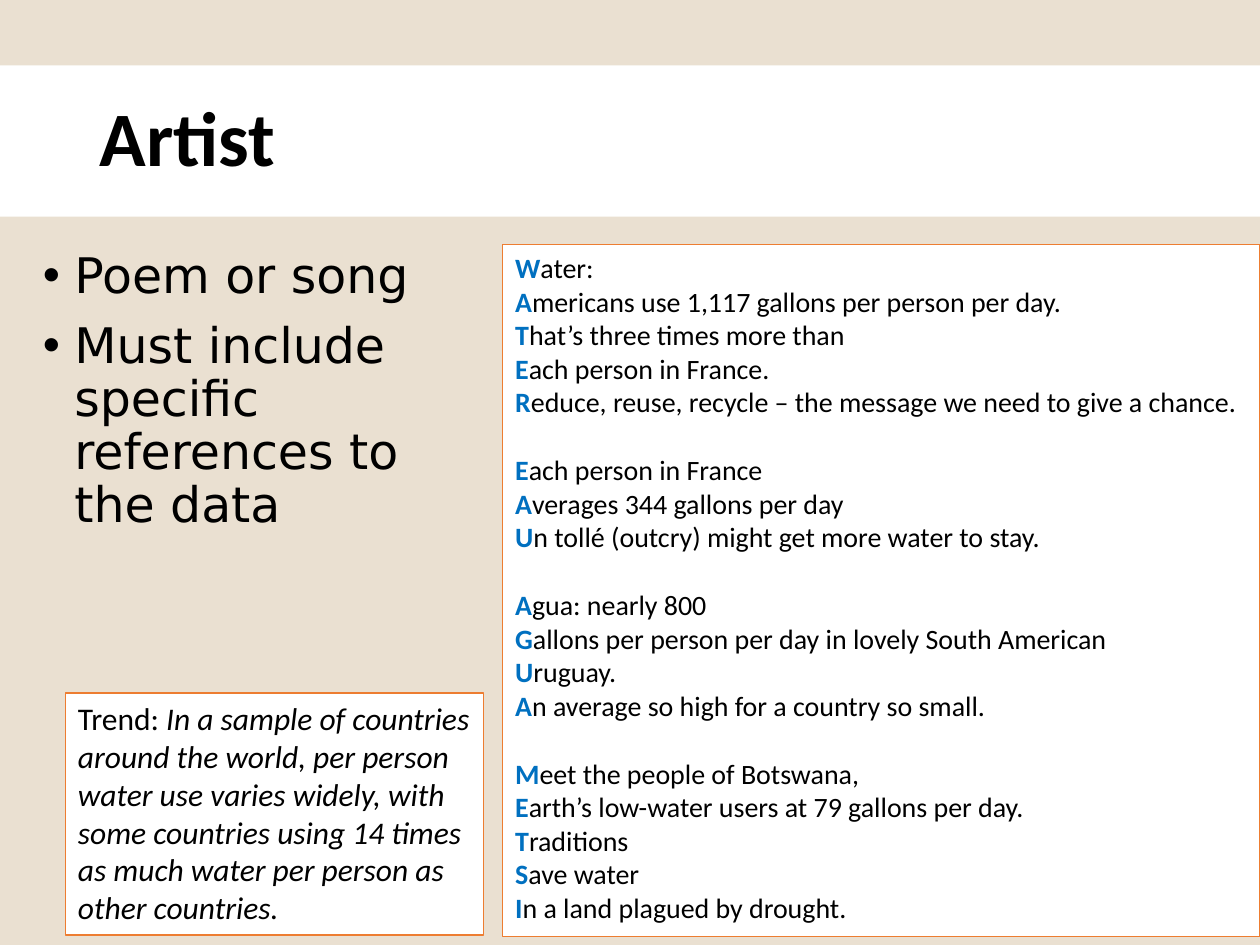
"""Build the Artist slide: a data poem, its trend statement and the task list."""
from dataclasses import dataclass

from lxml import etree
from pptx import Presentation
from pptx.dml.color import RGBColor
from pptx.enum.shapes import MSO_SHAPE
from pptx.enum.text import MSO_ANCHOR, MSO_AUTO_SIZE, PP_ALIGN
from pptx.oxml.ns import qn
from pptx.util import Inches, Pt

TITLE = "Artist"
TASKS = ["Poem or song", "Must include specific references to the data"]
TREND = (
    "Trend: ",
    "In a sample of countries around the world, per person water use varies widely, "
    "with some countries using 14 times as much water per person as other countries.",
)
STANZAS = [
    [
        "Water:",
        "Americans use 1,117 gallons per person per day.",
        "That’s three times more than",
        "Each person in France.",
        "Reduce, reuse, recycle – the message we need to give a chance.",
    ],
    [
        "Each person in France",
        "Averages 344 gallons per day",
        "Un tollé (outcry) might get more water to stay.",
    ],
    [
        "Agua: nearly 800",
        "Gallons per person per day in lovely South American",
        "Uruguay.",
        "An average so high for a country so small.",
    ],
    [
        "Meet the people of Botswana,",
        "Earth’s low-water users at 79 gallons per day.",
        "Traditions",
        "Save water",
        "In a land plagued by drought.",
    ],
]
PLACES = {
    "band": (0, 0.52, 10, 1.2),
    "title": (0.69, 0.4, 8.62, 1.45),
    "tasks": (0.24, 1.94, 3.74, 4.76),
    "trend": (0.52, 5.5, 3.32, 1.92),
    "poem": (3.99, 1.94, 6.01, 5.49),
}


@dataclass(frozen=True)
class Theme:
    background: RGBColor = RGBColor(0xEA, 0xE0, 0xD1)
    panel: RGBColor = RGBColor(0xFF, 0xFF, 0xFF)
    border: RGBColor = RGBColor(0xED, 0x7D, 0x31)
    ink: RGBColor = RGBColor(0x00, 0x00, 0x00)
    initial: RGBColor = RGBColor(0x00, 0x70, 0xC0)
    main_font: str = "Calibri"
    task_font: str = "DejaVu Sans"
    title_size: int = 44
    task_size: int = 28
    trend_size: int = 18
    poem_size: int = 16
    stanza_gap: float = 19.5


THEME = Theme()


def place(shape, key):
    shape.left, shape.top, shape.width, shape.height = map(Inches, PLACES[key])


def style(font, name, size, bold=False):
    font.name, font.size, font.bold = name, Pt(size), bold
    font.color.rgb = THEME.ink


def add_panel(slide, key, bordered=True):
    panel = slide.shapes.add_shape(MSO_SHAPE.RECTANGLE, *map(Inches, PLACES[key]))
    panel.shadow.inherit = False
    panel.fill.solid()
    panel.fill.fore_color.rgb = THEME.panel
    if bordered:
        panel.line.color.rgb = THEME.border
        panel.line.width = Pt(0.75)
    else:
        panel.line.fill.background()
    panel.text_frame.word_wrap = True
    panel.text_frame.vertical_anchor = MSO_ANCHOR.TOP
    return panel


def add_run(paragraph, text, color=THEME.ink, bold=False, italic=False):
    run = paragraph.add_run()
    run.text = text
    run.font.color.rgb = color
    run.font.bold, run.font.italic = bold, italic


def next_paragraph(frame, first):
    return frame.paragraphs[0] if first else frame.add_paragraph()


def fill_title(title):
    place(title, "title")
    frame = title.text_frame
    frame.text = TITLE
    frame.auto_size = MSO_AUTO_SIZE.NONE
    frame.vertical_anchor = MSO_ANCHOR.MIDDLE
    heading = frame.paragraphs[0]
    heading.alignment = PP_ALIGN.LEFT
    heading.line_spacing = 0.9
    style(heading.font, THEME.main_font, THEME.title_size, bold=True)


def fill_tasks(body):
    place(body, "tasks")
    frame = body.text_frame
    frame.auto_size = MSO_AUTO_SIZE.NONE
    for index, text in enumerate(TASKS):
        task = next_paragraph(frame, index == 0)
        task.text = text
        task.line_spacing = 0.9
        task.space_before = Pt(10 if index else 0)
        properties = task._p.get_or_add_pPr()
        properties.set("marL", str(Inches(0.25)))
        properties.set("indent", str(Inches(-0.25)))
        etree.SubElement(properties, qn("a:buFont")).set("typeface", "Arial")
        etree.SubElement(properties, qn("a:buChar")).set("char", "•")
        style(task.font, THEME.task_font, THEME.task_size)


def fill_trend(panel):
    trend = panel.text_frame.paragraphs[0]
    trend.alignment = PP_ALIGN.LEFT
    style(trend.font, THEME.main_font, THEME.trend_size)
    label, statement = TREND
    add_run(trend, label)
    add_run(trend, statement, italic=True)


def fill_poem(panel):
    for stanza_index, stanza in enumerate(STANZAS):
        for verse_index, text in enumerate(stanza):
            verse = next_paragraph(panel.text_frame, stanza_index == verse_index == 0)
            verse.alignment = PP_ALIGN.LEFT
            if stanza_index and verse_index == 0:
                verse.space_before = Pt(THEME.stanza_gap)
            style(verse.font, THEME.main_font, THEME.poem_size)
            add_run(verse, text[0], THEME.initial, bold=True)
            add_run(verse, text[1:])


def main():
    deck = Presentation()
    deck.slide_width, deck.slide_height = Inches(10), Inches(7.5)
    slide = deck.slides.add_slide(deck.slide_layouts[1])
    slide.background.fill.solid()
    slide.background.fill.fore_color.rgb = THEME.background
    band = add_panel(slide, "band", bordered=False)
    slide.shapes.title._element.addprevious(band._element)
    fill_title(slide.shapes.title)
    fill_tasks(slide.placeholders[1])
    fill_trend(add_panel(slide, "trend"))
    fill_poem(add_panel(slide, "poem"))
    deck.save("out.pptx")


if __name__ == "__main__":
    main()
